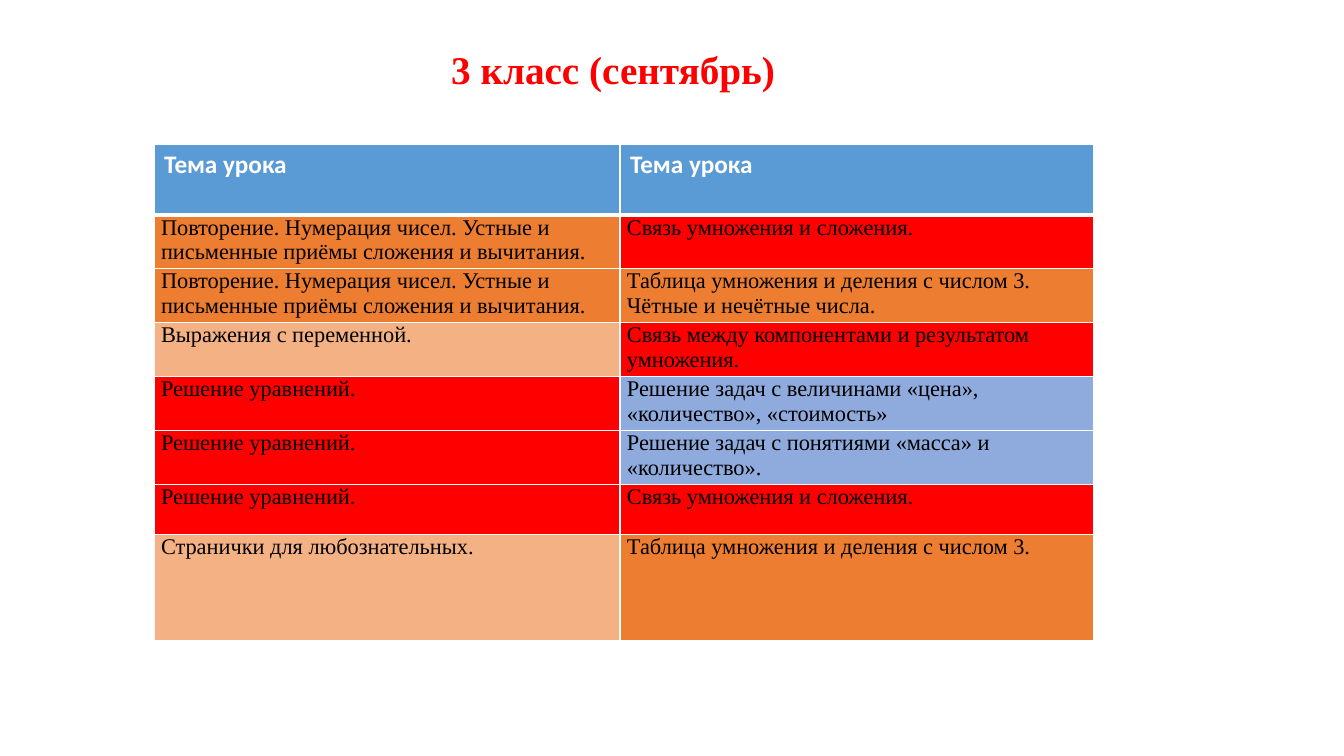
import pptx
import pptx.dml.color
import pptx.enum.text
import pptx.oxml
import pptx.oxml.ns
import pptx.util

RGB = pptx.dml.color.RGBColor
WHITE = RGB(0xFF, 0xFF, 0xFF)
BLACK = RGB(0x00, 0x00, 0x00)
RED = RGB(0xFF, 0x00, 0x00)
BLUE = RGB(0x5B, 0x9B, 0xD5)
ORANGE = RGB(0xED, 0x7D, 0x31)
PEACH = RGB(0xF4, 0xB1, 0x83)
PERIWINKLE = RGB(0x8F, 0xAA, 0xDC)

SERIF = "Times New Roman"
HEADING = "Тема урока"
REVIEW = "Повторение. Нумерация чисел. Устные и письменные приёмы сложения и вычитания."
EQUATIONS = "Решение уравнений."
LINK = "Связь умножения и сложения."

# Each row: two lessons, each with its topic and colour
LESSONS = [
    ((REVIEW, ORANGE), (LINK, RED)),
    ((REVIEW, ORANGE),
     ("Таблица умножения и деления с числом 3. Чётные и нечётные числа.", ORANGE)),
    (("Выражения с переменной.", PEACH),
     ("Связь между компонентами и результатом умножения.", RED)),
    ((EQUATIONS, RED),
     ("Решение задач с величинами «цена», «количество», «стоимость»", PERIWINKLE)),
    ((EQUATIONS, RED),
     ("Решение задач с понятиями «масса» и «количество».", PERIWINKLE)),
    ((EQUATIONS, RED), (LINK, RED)),
    (("Странички для любознательных.", PEACH),
     ("Таблица умножения и деления с числом 3.", ORANGE)),
]
COLUMN_WIDTHS = [466, 474]
ROW_HEIGHTS = [71, 53, 54, 54, 54, 54, 50, 106]


def px(length):
    return pptx.util.Emu(round(length * 914400 / 100.8))


def style(paragraph, font_name, size, color, bold=False):
    for run in paragraph.runs:
        run.font.name = font_name
        run.font.size = pptx.util.Pt(size)
        run.font.color.rgb = color
        run.font.bold = bold


def add_borders(cell, bottom_width):
    properties = cell._tc.get_or_add_tcPr()
    for side, width in (("L", 1), ("R", 1), ("T", 1), ("B", bottom_width)):
        properties.append(pptx.oxml.parse_xml(
            f'<a:ln{side} {pptx.oxml.ns.nsdecls("a")} w="{pptx.util.Pt(width)}">'
            f'<a:solidFill><a:srgbClr val="{WHITE}"/></a:solidFill></a:ln{side}>'))


def add_title(slide, left, top, width, height):
    title = slide.shapes.add_textbox(px(left), px(top), px(width), px(height)).text_frame
    title.word_wrap = True
    title.margin_left = px(34)
    title.text = "3 класс (сентябрь)"
    title.paragraphs[0].alignment = pptx.enum.text.PP_ALIGN.CENTER
    style(title.paragraphs[0], SERIF, 28, RED, bold=True)


def add_lessons(slide, left, top):
    rows = [((HEADING, BLUE), (HEADING, BLUE))] + LESSONS
    lessons = slide.shapes.add_table(
        len(rows), len(COLUMN_WIDTHS), px(left), px(top),
        px(sum(COLUMN_WIDTHS)), px(sum(ROW_HEIGHTS))).table
    for column, width in zip(lessons.columns, COLUMN_WIDTHS):
        column.width = px(width)
    for row, height in zip(lessons.rows, ROW_HEIGHTS):
        row.height = px(height)

    for row_index, row in enumerate(rows):
        is_header = row_index == 0
        for column_index, (topic, color) in enumerate(row):
            cell = lessons.cell(row_index, column_index)
            cell.text_frame.text = topic
            add_borders(cell, 3 if is_header else 1)
            cell.fill.solid()
            cell.fill.fore_color.rgb = color
            if is_header:
                style(cell.text_frame.paragraphs[0], "Calibri", 18, WHITE, bold=True)
            else:
                cell.margin_left = cell.margin_right = px(7)
                cell.margin_top = cell.margin_bottom = 0
                style(cell.text_frame.paragraphs[0], SERIF, 16, BLACK)


def main():
    presentation = pptx.Presentation()
    presentation.slide_width = px(1344)
    presentation.slide_height = px(756)
    slide = presentation.slides.add_slide(presentation.slide_layouts[6])
    add_title(slide, 251, 40, 700, 60)
    add_lessons(slide, 154, 144)
    presentation.save("out.pptx")


if __name__ == "__main__":
    main()
